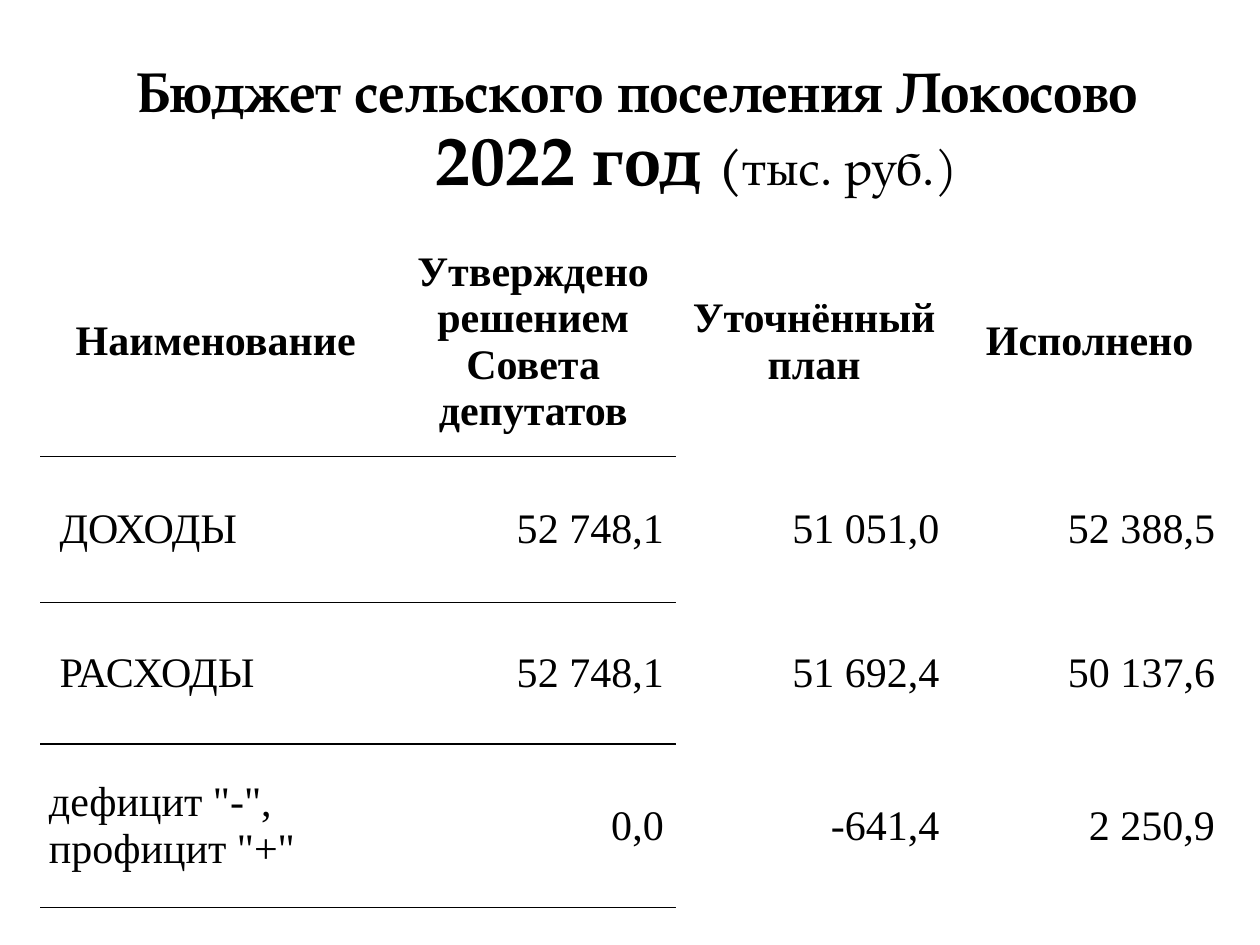
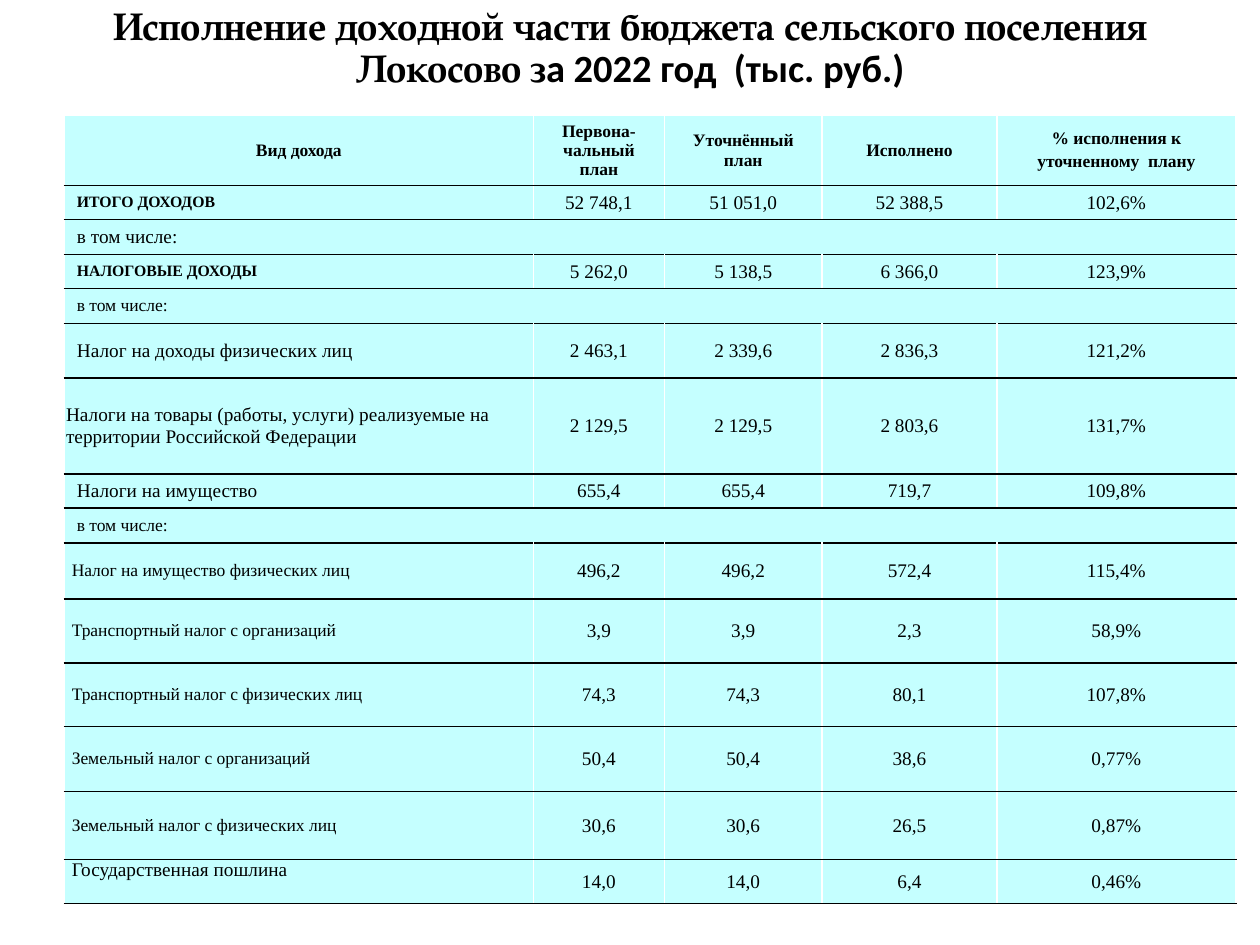
from lxml.etree import SubElement
from pptx import Presentation
from pptx.dml.color import RGBColor
from pptx.enum.text import MSO_ANCHOR, PP_ALIGN
from pptx.oxml.ns import qn
from pptx.util import Pt

BLACK, WHITE, AQUA = "000000", "FFFFFF", "C5FFFF"
SERIF, HEAD, SANS = "Times New Roman", "TeX Gyre Pagella", "Calibri"
LEFT, MID, RIGHT = PP_ALIGN.LEFT, PP_ALIGN.CENTER, PP_ALIGN.RIGHT

PLAN = [
    ("ДОХОДЫ", 83.5, 10.6, "52 748,1", "51 051,0", "52 388,5"),
    ("РАСХОДЫ", 81, 10.6, "52 748,1", "51 692,4", "50 137,6"),
    ('дефицит "-", профицит "+"', 93.5, 4.5, "0,0", "-641,4", "2 250,9"),
]
PLAN_HEAD = ["Наименование", "Утверждено решением Совета депутатов",
             "Уточнённый план", "Исполнено"]

TAXES = [
    ("ИТОГО ДОХОДОВ", 19.5, 7.2, 9, True, "52 748,1 51 051,0 52 388,5 102,6%"),
    ("в том числе:", 20, 7.2, 11, False, ""),
    ("НАЛОГОВЫЕ ДОХОДЫ", 19.5, 7.2, 9, True, "5 262,0 5 138,5 6 366,0 123,9%"),
    ("в том числе:", 20, 7.2, 10, False, ""),
    ("Налог на доходы физических лиц", 31, 7.2, 11, False,
     "2 463,1 2 339,6 2 836,3 121,2%"),
    ("Налоги на товары (работы, услуги) реализуемые на территории Российской Федерации",
     55, 1, 11, False, "2 129,5 2 129,5 2 803,6 131,7%"),
    ("Налоги на имущество", 19.5, 7.2, 11, False, "655,4 655,4 719,7 109,8%"),
    ("в том числе:", 20, 7.2, 10, False, ""),
    ("Налог на имущество физических лиц", 32, 4.3, 10, False,
     "496,2 496,2 572,4 115,4%"),
    ("Транспортный налог с организаций", 36.5, 4.3, 10, False, "3,9 3,9 2,3 58,9%"),
    ("Транспортный налог с физических лиц", 36.5, 4.3, 10, False,
     "74,3 74,3 80,1 107,8%"),
    ("Земельный налог с организаций", 37, 4.3, 10, False, "50,4 50,4 38,6 0,77%"),
    ("Земельный налог с физических лиц", 39, 4.3, 10, False, "30,6 30,6 26,5 0,87%"),
    ("Государственная пошлина", 25, 4.3, 11, False, "14,0 14,0 6,4 0,46%"),
]
TAX_HEAD = ["Вид дохода", "Первона-чальный план", "Уточнённый план", "Исполнено",
            "% исполнения к\nуточненному  плану"]


def tint(code):
    return RGBColor.from_string(code)


def put(part, form):
    for key, val in form.items():
        setattr(part, key, val)


def add_run(para, text, size, bold, face):
    run = para.add_run()
    run.text = text
    put(run.font, {"size": Pt(size), "bold": bold, "name": face})
    run.font.color.rgb = tint(BLACK)


def add_title(slide, box, lines, indent=0):
    frame = slide.shapes.add_textbox(*map(Pt, box)).text_frame
    put(frame, {"word_wrap": True, "vertical_anchor": MSO_ANCHOR.MIDDLE})
    for num, runs in enumerate(lines):
        para = frame.add_paragraph() if num else frame.paragraphs[0]
        put(para, {"alignment": MID, "line_spacing": 0.9})
        if num:
            para._p.get_or_add_pPr().set("marL", str(Pt(indent)))
        for run in runs:
            add_run(para, *run)


def edge(cell, sides):
    props = cell._tc.get_or_add_tcPr()
    for num, (side, code) in enumerate(sides.items()):
        line = SubElement(props, qn("a:ln" + side), w=str(Pt(1)))
        fill = SubElement(line, qn("a:solidFill"))
        SubElement(fill, qn("a:srgbClr"), val=code)
        props.remove(line)
        props.insert(num, line)


def fill_cell(cell, text, size, bold=False, align=MID, inset=7.2, anchor=MSO_ANCHOR.MIDDLE):
    put(cell, {"margin_left": Pt(inset), "margin_right": Pt(min(inset, 7.2)),
               "margin_top": 0, "margin_bottom": 0, "vertical_anchor": anchor})
    for num, line in enumerate(text.split("\n")):
        frame = cell.text_frame
        para = frame.add_paragraph() if num else frame.paragraphs[0]
        put(para, {"alignment": align, "space_before": Pt(2 * num)})
        add_run(para, line, size, bold, SERIF)


def add_grid(slide, spot, cols, rows, back, ruled):
    box = (*spot, sum(cols), sum(rows))
    grid = slide.shapes.add_table(len(rows), len(cols), *map(Pt, box)).table
    put(grid, {"first_row": False, "horz_banding": False})
    for col, wide in zip(grid.columns, cols):
        col.width = Pt(wide)
    for row, (line, high) in enumerate(zip(grid.rows, rows)):
        line.height = Pt(high)
        for col, cell in enumerate(line.cells):
            cell.fill.solid()
            cell.fill.fore_color.rgb = tint(back)
            rule = BLACK if col < ruled else WHITE
            edge(cell, {"L": WHITE, "R": WHITE, "T": rule if row else WHITE, "B": rule})
    return grid


def add_head(grid, texts, size):
    for col, text in enumerate(texts):
        fill_cell(grid.cell(0, col), text, size, True)


def plan_page(slide):
    add_title(slide, (30.25, 22.3, 667.5, 106.6), [
        [("Бюджет сельского поселения Локосово", 32, True, HEAD)],
        [("2022 год ", 40, True, HEAD), ("(", 28, True, HEAD),
         ("тыс. руб.)", 28, False, HEAD)]], 68)
    highs = [131] + [item[1] for item in PLAN]
    grid = add_grid(slide, (23.5, 129.75), [199.5, 163.5, 157.5, 157.5], highs, WHITE, 2)
    add_head(grid, PLAN_HEAD, 24)
    for row, (name, _, inset, *sums) in enumerate(PLAN, 1):
        fill_cell(grid.cell(row, 0), name, 24, align=LEFT, inset=inset)
        for col, text in enumerate(sums, 1):
            fill_cell(grid.cell(row, col), text, 24, align=RIGHT)


def split_sums(text):
    parts = []
    for word in text.split():
        if parts and "," not in parts[-1]:
            parts[-1] += " " + word
        else:
            parts.append(word)
    return parts


def tax_page(slide):
    add_title(slide, (11.5, 2, 697.5, 52), [
        [("Исполнение доходной части бюджета сельского поселения Локосово з", 22, True, HEAD),
         ("а 2022 год  (тыс. руб.)", 22, True, SANS)]])
    highs = [40] + [item[1] for item in TAXES]
    grid = add_grid(slide, (36.75, 66), [268, 75, 90, 100, 136.5], highs, AQUA, 5)
    add_head(grid, TAX_HEAD, 10)
    last = len(TAXES)
    for row, (name, _, inset, size, bold, sums) in enumerate(TAXES, 1):
        anchor = MSO_ANCHOR.TOP if row == last else MSO_ANCHOR.MIDDLE
        fill_cell(grid.cell(row, 0), name, size, bold, LEFT, inset, anchor)
        if not sums:
            grid.cell(row, 0).merge(grid.cell(row, 4))
        for col, text in enumerate(split_sums(sums), 1):
            fill_cell(grid.cell(row, col), text, 11)


def main():
    deck = Presentation()
    put(deck, {"slide_width": Pt(720), "slide_height": Pt(540)})
    for page in (plan_page, tax_page):
        slide = deck.slides.add_slide(deck.slide_layouts[6])
        slide.background.fill.solid()
        slide.background.fill.fore_color.rgb = tint(WHITE)
        page(slide)
    deck.save("out.pptx")


if __name__ == "__main__":
    main()
